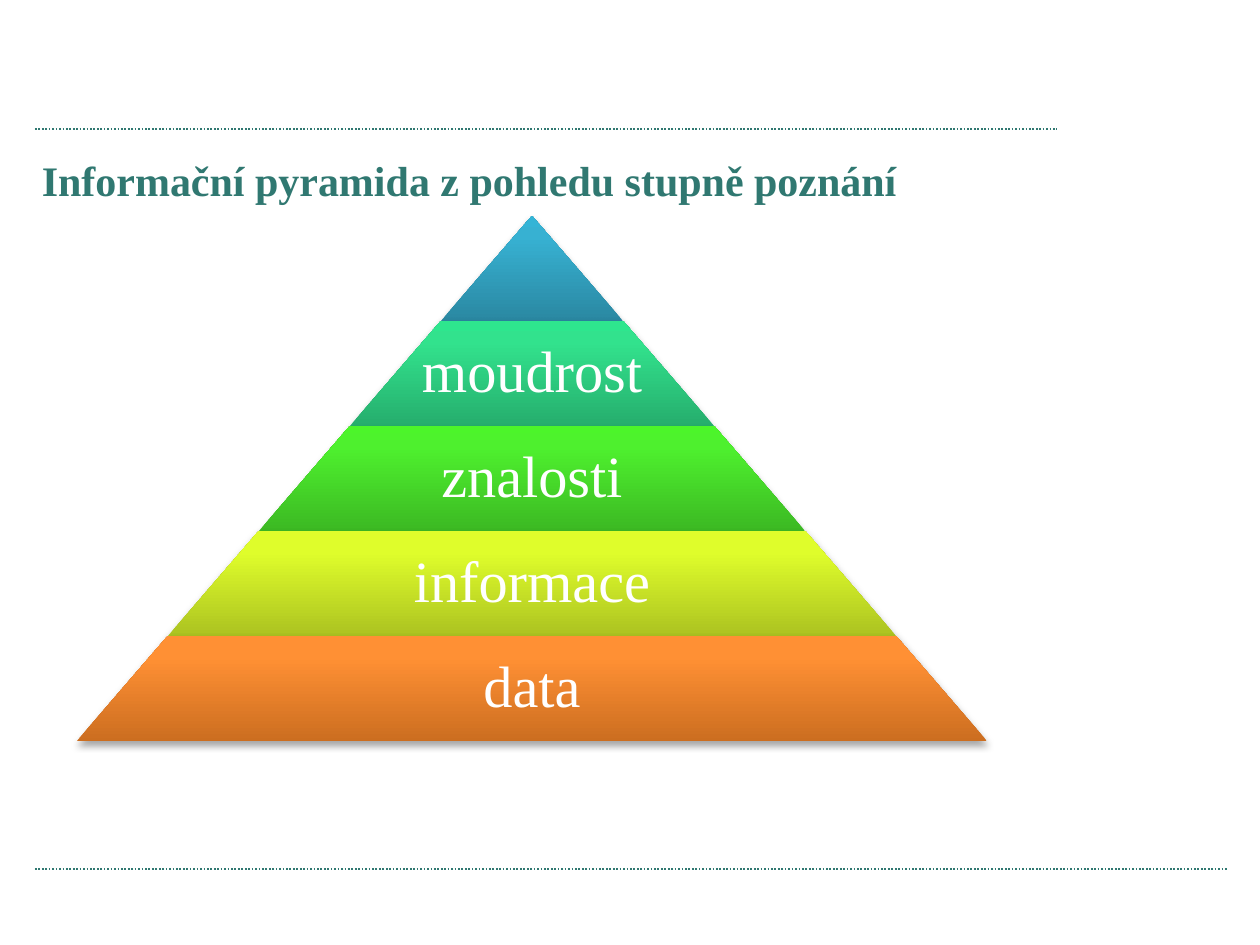
"""Build the knowledge pyramid slide."""
from copy import deepcopy

from lxml.etree import SubElement
from pptx import Presentation
from pptx.dml.color import RGBColor
from pptx.enum.dml import MSO_LINE
from pptx.enum.shapes import MSO_CONNECTOR, MSO_SHAPE
from pptx.enum.text import MSO_ANCHOR, PP_ALIGN
from pptx.oxml.ns import qn
from pptx.util import Pt

TITLE = "Informační pyramida z pohledu stupně poznání"
TIERS = [
    ("", ("2A88A2", "37B1D2", "34B4D6")),
    ("moudrost", ("26AE6D", "32E28D", "2EE68E")),
    ("znalosti", ("3CB923", "4EF02E", "4CF52A")),
    ("informace", ("ACC321", "DFFD2B", "E1FF2B")),
    ("data", ("CC6E20", "FF9034", "FF9136")),
]
STOPS = (0, 0.8, 1)
RULES = [(35, 129, 1057), (35, 869, 1228)]
FONT, TEAL, WHITE = "Times New Roman", "307871", "FFFFFF"
CENTER, TOP, TIER_HEIGHT, TIER_STEP = 532, 216, 105, 182
SLOPE, LABEL_SHARE, LABEL_INSET = 0.865, 0.65, 5


def px(length):
    return round(length * 914400 / 168)


def color(value):
    return RGBColor.from_string(value)


def write(paragraph, text, size, value, bold=False):
    run = paragraph.add_run()
    run.text = text
    run.font.name, run.font.size, run.font.bold = FONT, Pt(size), bold
    run.font.color.rgb = color(value)


def add_rule(shapes, left, y, right):
    rule = shapes.add_connector(MSO_CONNECTOR.STRAIGHT, px(left), px(y), px(right), px(y))
    rule.line.color.rgb = color(TEAL)
    rule.line.width = Pt(0.75)
    rule.line.dash_style = MSO_LINE.ROUND_DOT
    SubElement(rule._element.spPr, qn("a:effectLst"))


def fill_gradient(shape, colors):
    shape.fill.gradient()
    shape.fill.gradient_angle = 90
    stop_list = shape._element.spPr.find(".//" + qn("a:gsLst"))
    stop_list.append(deepcopy(stop_list[0]))
    for stop, position, value in zip(shape.fill.gradient_stops, STOPS, colors):
        stop.position = position
        stop.color.rgb = color(value)


def add_shadow(shape):
    shape.shadow.inherit = False
    effects = shape._element.spPr.find(qn("a:effectLst"))
    shadow = SubElement(effects, qn("a:outerShdw"), blurRad=str(Pt(3.1)),
                        dist=str(Pt(1.8)), dir="5400000", rotWithShape="0")
    black = SubElement(shadow, qn("a:srgbClr"), val="000000")
    SubElement(black, qn("a:alpha"), val="35000")


def add_label(shapes, text, top, width):
    box = shapes.add_textbox(px(CENTER - width / 2), px(top), px(width), px(TIER_HEIGHT))
    frame = box.text_frame
    frame.word_wrap = True
    frame.vertical_anchor = MSO_ANCHOR.MIDDLE
    frame.margin_left = frame.margin_right = px(LABEL_INSET)
    frame.margin_top = frame.margin_bottom = px(LABEL_INSET)
    paragraph = frame.paragraphs[0]
    paragraph.alignment = PP_ALIGN.CENTER
    paragraph.line_spacing = 0.9
    write(paragraph, text, 25, WHITE)


def add_tier(shapes, index, text, colors):
    width, top = TIER_STEP * (index + 1), TOP + TIER_HEIGHT * index
    tier = shapes.add_shape(MSO_SHAPE.TRAPEZOID, px(CENTER - width / 2), px(top),
                            px(width), px(TIER_HEIGHT))
    tier.adjustments[0] = SLOPE
    fill_gradient(tier, colors)
    tier.line.fill.background()
    add_shadow(tier)
    if text:
        add_label(shapes, text, top, width * LABEL_SHARE)


def main():
    presentation = Presentation()
    presentation.slide_width, presentation.slide_height = px(1260), px(945)
    slide = presentation.slides.add_slide(presentation.slide_layouts[5])
    for rule in RULES:
        add_rule(slide.shapes, *rule)

    title = slide.shapes.title
    title.left, title.top, title.width, title.height = map(px, (25, 144, 1032, 71))
    title.text_frame.vertical_anchor = MSO_ANCHOR.MIDDLE
    paragraph = title.text_frame.paragraphs[0]
    paragraph.alignment = PP_ALIGN.LEFT
    write(paragraph, TITLE, 18, TEAL, bold=True)

    pyramid = slide.shapes.add_group_shape()
    for index, (text, colors) in enumerate(TIERS):
        add_tier(pyramid.shapes, index, text, colors)
    presentation.save("out.pptx")


if __name__ == "__main__":
    main()
